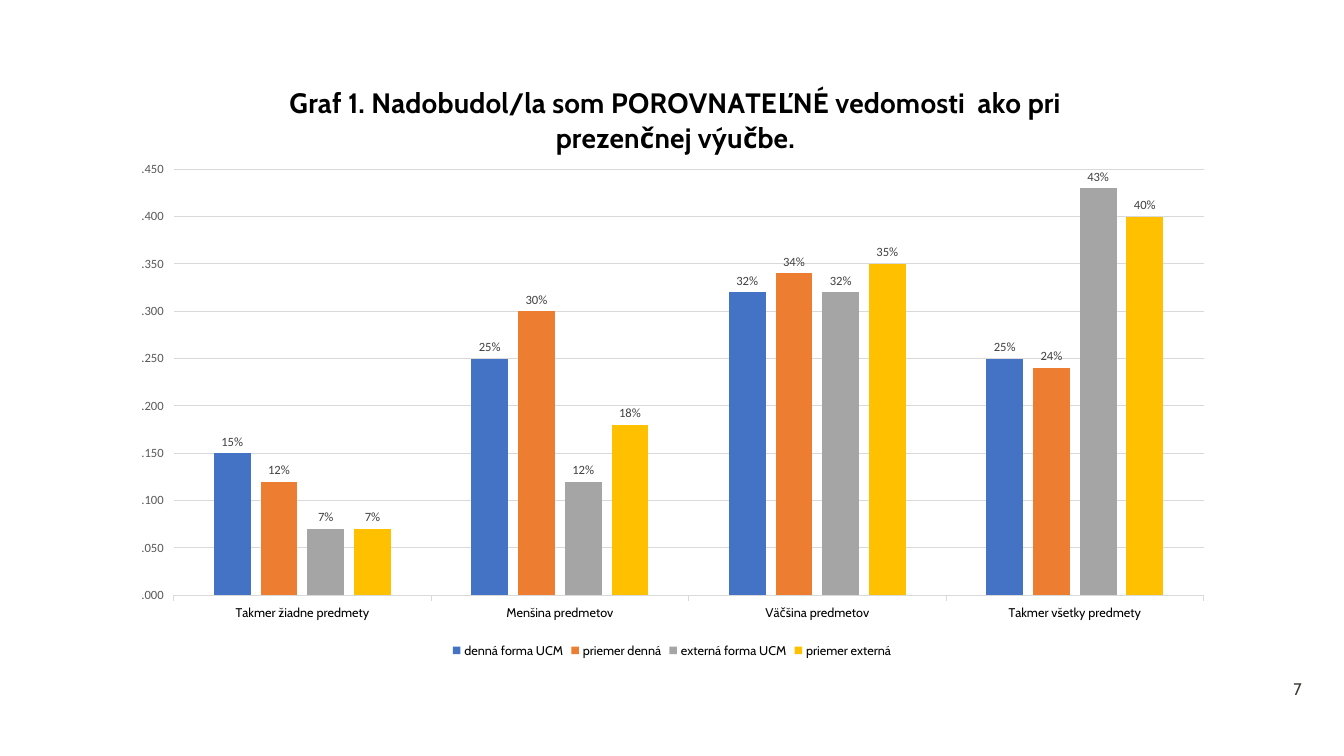
from pptx import Presentation
from pptx.chart.data import CategoryChartData as ChartData
from pptx.dml.color import RGBColor as RGB
from pptx.enum.chart import XL_CHART_TYPE as CT, XL_LABEL_POSITION as LP
from pptx.enum.chart import XL_LEGEND_POSITION as LegendPos, XL_TICK_MARK as Tick
from pptx.enum.text import MSO_ANCHOR as Anchor, PP_ALIGN as Align
from pptx.oxml import parse_xml
from pptx.oxml.ns import qn
from pptx.util import Inches, Pt

COLORS = {"black": "000000", "axis": "595959", "label": "404040",
          "grid": "D9D9D9", "number": "3D3935", "background": "FFFFFF"}
CATEGORIES = ["Takmer žiadne predmety", "Menšina predmetov",
              "Väčšina predmetov", "Takmer všetky predmety"]
SERIES = [("denná forma UCM", "4472C4", (0.15, 0.25, 0.32, 0.25)),
          ("priemer denná", "ED7D31", (0.12, 0.3, 0.34, 0.24)),
          ("externá forma UCM", "A5A5A5", (0.07, 0.12, 0.32, 0.43)),
          ("priemer externá", "FFC000", (0.07, 0.18, 0.35, 0.4))]
TITLE = "Graf 1. Nadobudol/la som POROVNATEĽNÉ vedomosti  ako pri prezenčnej výučbe."
LAYOUT_NS = "http://schemas.openxmlformats.org/drawingml/2006/chart"


class SlideBuilder:
    """Draws styled elements on one slide, placed in percent of its size."""

    def __init__(self, prs):
        self.prs = prs
        self.s = prs.slides.add_slide(prs.slide_layouts[6])
        fill = self.s.background.fill
        fill.solid()
        fill.fore_color.rgb = RGB.from_string(COLORS["background"])

    def box(self, x, y, w, h):
        width, height = self.prs.slide_width, self.prs.slide_height
        return [round(share * size / 100) for share, size in
                zip((x, y, w, h), (width, height, width, height))]

    def font(self, font, size, color, name="Cabin", bold=False):
        font.size, font.name, font.bold = Pt(size), name, bold
        font.color.rgb = RGB.from_string(COLORS[color])

    def line(self, line, color):
        line.color.rgb = RGB.from_string(COLORS[color])
        line.width = Pt(0.75)

    def text(self, text, place, size, color, align):
        tf = self.s.shapes.add_textbox(*self.box(*place)).text_frame
        tf.word_wrap = True
        tf.vertical_anchor = Anchor.MIDDLE
        p = tf.paragraphs[0]
        p.alignment = align
        r = p.add_run()
        r.text = text
        self.font(r.font, size, color)

    def layout(self, parent, index, **parts):
        for old in parent.findall(qn("c:layout")):
            parent.remove(old)
        target = '<c:layoutTarget val="inner"/>' if "w" in parts else ""
        modes = "".join(f'<c:{k}Mode val="edge"/>' for k in "xy")
        values = "".join(f'<c:{k} val="{v}"/>' for k, v in parts.items())
        parent.insert(index, parse_xml(
            f'<c:layout xmlns:c="{LAYOUT_NS}"><c:manualLayout>'
            f'{target}{modes}{values}</c:manualLayout></c:layout>'))

    def column_chart(self, title, categories, series, place):
        data = ChartData()
        data.categories = categories
        for name, _, values in series:
            data.add_series(name, values)
        chart = self.s.shapes.add_chart(
            CT.COLUMN_CLUSTERED, *self.box(*place), data).chart
        self.font(chart.font, 10, "black", "Calibri")
        self.chart_title(chart, title)
        self.axes(chart)
        self.columns(chart.plots[0], series)
        chart.has_legend = True
        chart.legend.position = LegendPos.BOTTOM
        chart.legend.include_in_layout = False
        self.font(chart.legend.font, 9, "black")
        plot_area = chart.element.find(".//" + qn("c:plotArea"))
        self.layout(plot_area, 0, x=0.05, y=0.19, w=0.93, h=0.7)

    def chart_title(self, chart, title):
        chart.has_title = True
        p = chart.chart_title.text_frame.paragraphs[0]
        p.alignment = Align.CENTER
        r = p.add_run()
        r.text = title
        self.font(r.font, 20, "black", bold=True)
        self.layout(chart.element.find(".//" + qn("c:title")), 1, x=0.15, y=0.04)

    def axes(self, chart):
        cat, val = chart.category_axis, chart.value_axis
        for axis, color, name in ((cat, "black", "Cabin"),
                                  (val, "axis", "Calibri")):
            axis.major_tick_mark = Tick.OUTSIDE
            axis.minor_tick_mark = Tick.NONE
            self.font(axis.tick_labels.font, 9, color, name)
        self.line(cat.format.line, "grid")
        val.minimum_scale, val.maximum_scale, val.major_unit = 0, 0.45, 0.05
        val.tick_labels.number_format = ".000"
        val.tick_labels.number_format_is_linked = False
        val.format.line.fill.background()
        val.has_major_gridlines = True
        self.line(val.major_gridlines.format.line, "grid")

    def columns(self, plot, series):
        plot.gap_width, plot.overlap, plot.vary_by_categories = 219, -27, False
        for ser, (_, color, _) in zip(plot.series, series):
            ser.format.fill.solid()
            ser.format.fill.fore_color.rgb = RGB.from_string(color)
            labels = ser.data_labels
            labels.show_value = True
            labels.position = LP.OUTSIDE_END
            labels.number_format = "0%"
            labels.number_format_is_linked = False
            self.font(labels.font, 9, "label", "Calibri")


def main():
    prs = Presentation()
    prs.slide_width, prs.slide_height = Inches(13.33), Inches(7.5)
    slide = SlideBuilder(prs)
    slide.text("7", (91.9, 88.9, 5.7, 4.3), 12, "number", Align.RIGHT)
    slide.column_chart(TITLE, CATEGORIES, SERIES, (8.8, 7.1, 82.4, 80.5))
    prs.save("out.pptx")


if __name__ == "__main__":
    main()
